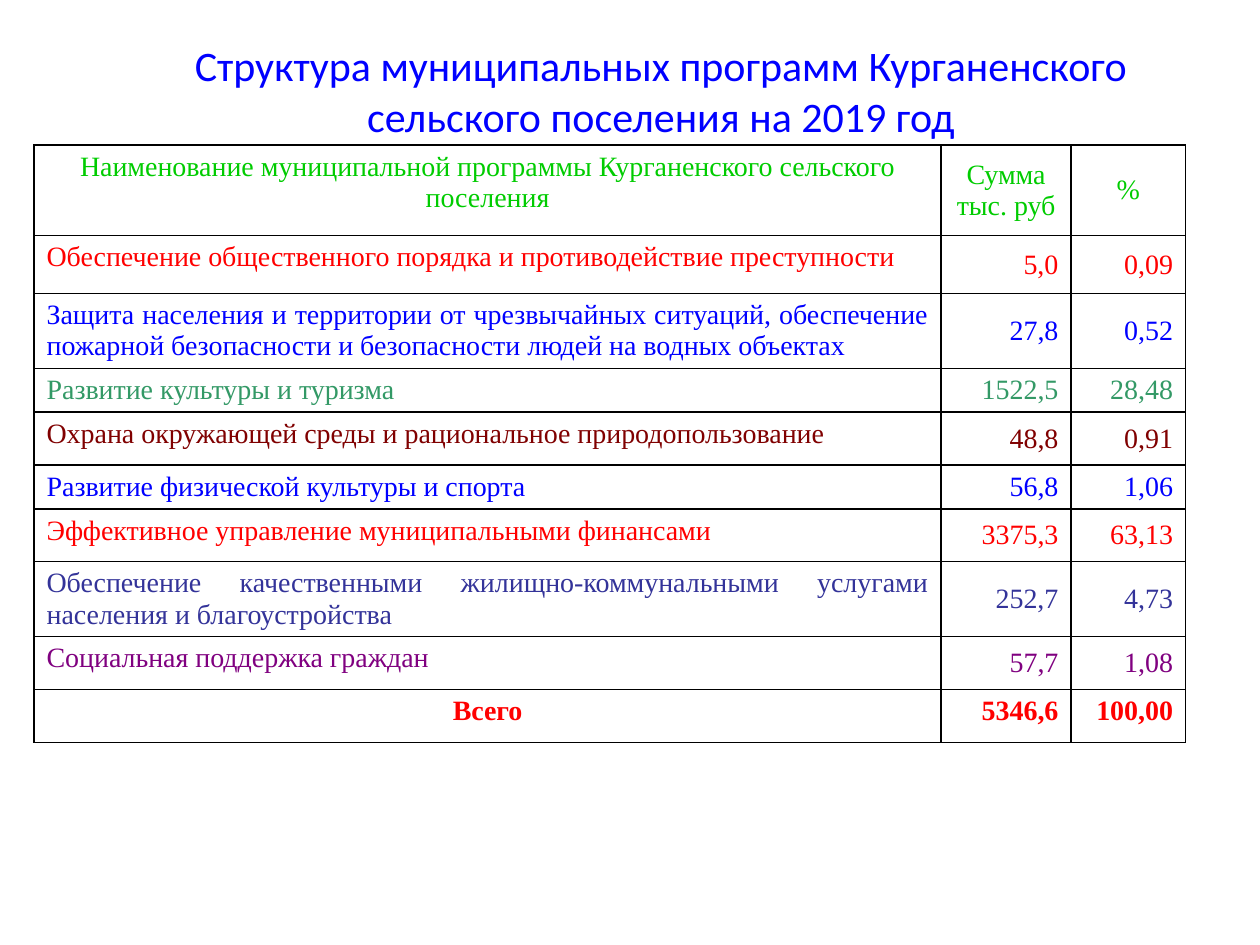
from lxml import etree
from pptx import Presentation
from pptx.dml.color import RGBColor
from pptx.enum.text import MSO_ANCHOR, MSO_AUTO_SIZE, PP_ALIGN
from pptx.oxml.ns import qn
from pptx.util import Inches, Pt

LEFT, CENTER, RIGHT, JUSTIFY = PP_ALIGN.LEFT, PP_ALIGN.CENTER, PP_ALIGN.RIGHT, PP_ALIGN.JUSTIFY
TOP, MIDDLE = MSO_ANCHOR.TOP, MSO_ANCHOR.MIDDLE
NO_AUTOFIT = MSO_AUTO_SIZE.NONE
TITLE_ONLY_LAYOUT = 5

# Content
TITLE = "Структура муниципальных программ Курганенского сельского поселения на 2019 год"
HEADER = ("Наименование муниципальной программы Курганенского сельского поселения",
          "Сумма тыс. руб", "%")
# Program, amount, share, colour name, row height
PROGRAMS = [
    ("Обеспечение общественного порядка и противодействие преступности",
     "5,0", "0,09", "red", 0.46),
    ("Защита населения и территории от чрезвычайных ситуаций, обеспечение "
     "пожарной безопасности и безопасности людей на водных объектах",
     "27,8", "0,52", "blue", 0.55),
    ("Развитие культуры и туризма", "1522,5", "28,48", "sea", 0.31),
    ("Охрана окружающей среды и рациональное природопользование",
     "48,8", "0,91", "maroon", 0.42),
    ("Развитие физической культуры и спорта", "56,8", "1,06", "blue", 0.2),
    ("Эффективное управление муниципальными финансами",
     "3375,3", "63,13", "red", 0.42),
    ("Обеспечение качественными жилищно-коммунальными услугами "
     "населения и благоустройства", "252,7", "4,73", "indigo", 0.58),
    ("Социальная поддержка граждан", "57,7", "1,08", "purple", 0.42),
]
TOTAL = ("Всего", "5346,6", "100,00")
COLUMN_WIDTHS = (7.2, 1.03, 0.91)
HEADER_HEIGHT, TOTAL_HEIGHT = 0.72, 0.42

THEME = {
    "title_font": "Calibri", "title_size": 24,
    "table_font": "Times New Roman", "table_size": 16,
    "border": "000000", "border_width": 1,
    "colors": {"green": "00CC00", "red": "FF0000", "blue": "0000FF", "sea": "339966",
               "maroon": "800000", "indigo": "333399", "purple": "800080"},
}


def style_font(paragraph, name, size, color, bold=False):
    font = paragraph.font
    font.name, font.size, font.bold = name, Pt(size), bold
    font.color.rgb = RGBColor.from_string(THEME["colors"][color])


def add_borders(cell):
    properties = cell._tc.get_or_add_tcPr()
    for position, side in enumerate(("a:lnL", "a:lnR", "a:lnT", "a:lnB")):
        line = etree.Element(qn(side), w=str(Pt(THEME["border_width"])))
        fill = etree.SubElement(line, qn("a:solidFill"))
        etree.SubElement(fill, qn("a:srgbClr"), val=THEME["border"])
        properties.insert(position, line)


def fill_row(row, texts, color, alignments, anchors, bold=False):
    for cell, text, alignment, anchor in zip(row.cells, texts, alignments, anchors):
        cell.text = text
        cell.vertical_anchor = anchor
        cell.fill.background()
        add_borders(cell)
        paragraph = cell.text_frame.paragraphs[0]
        paragraph.alignment = alignment
        style_font(paragraph, THEME["table_font"], THEME["table_size"], color, bold)


def add_title(slide):
    title = slide.shapes.title
    title.left, title.top = Inches(1), Inches(0.28)
    title.width, title.height = Inches(8.49), Inches(0.87)
    frame = title.text_frame
    frame.text = TITLE
    frame.auto_size = NO_AUTOFIT
    frame.vertical_anchor = MIDDLE
    paragraph = frame.paragraphs[0]
    paragraph.alignment = CENTER
    style_font(paragraph, THEME["title_font"], THEME["title_size"], "blue")


def add_programs_table(slide):
    heights = [HEADER_HEIGHT, *(program[-1] for program in PROGRAMS), TOTAL_HEIGHT]
    table = slide.shapes.add_table(
        len(heights), len(COLUMN_WIDTHS), Inches(0.27), Inches(1.15),
        Inches(sum(COLUMN_WIDTHS)), Inches(sum(heights))).table
    table.first_row = table.horz_banding = False
    for column, width in zip(table.columns, COLUMN_WIDTHS):
        column.width = Inches(width)
    rows = list(table.rows)
    for row, height in zip(rows, heights):
        row.height = Inches(height)

    # Header, programs and total
    middle_values = (TOP, MIDDLE, MIDDLE)
    fill_row(rows[0], HEADER, "green", (CENTER,) * 3, middle_values)
    for row, (name, amount, share, color, _) in zip(rows[1:], PROGRAMS):
        fill_row(row, (name, amount, share), color, (JUSTIFY, RIGHT, RIGHT), middle_values)
    fill_row(rows[-1], TOTAL, "red", (CENTER, RIGHT, RIGHT), (TOP,) * 3, bold=True)


def main():
    presentation = Presentation()
    presentation.slide_width, presentation.slide_height = Inches(10), Inches(7.5)
    slide = presentation.slides.add_slide(presentation.slide_layouts[TITLE_ONLY_LAYOUT])
    add_title(slide)
    add_programs_table(slide)
    presentation.save("out.pptx")


if __name__ == "__main__":
    main()
